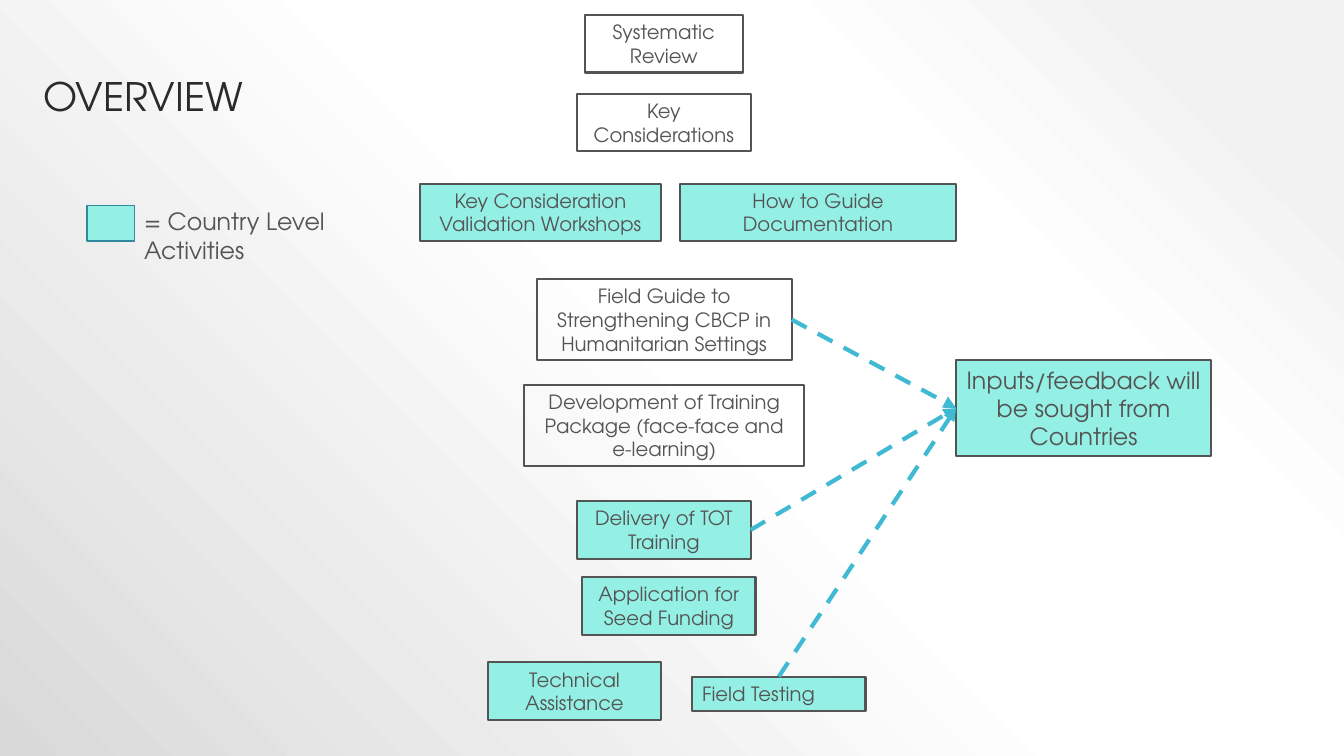
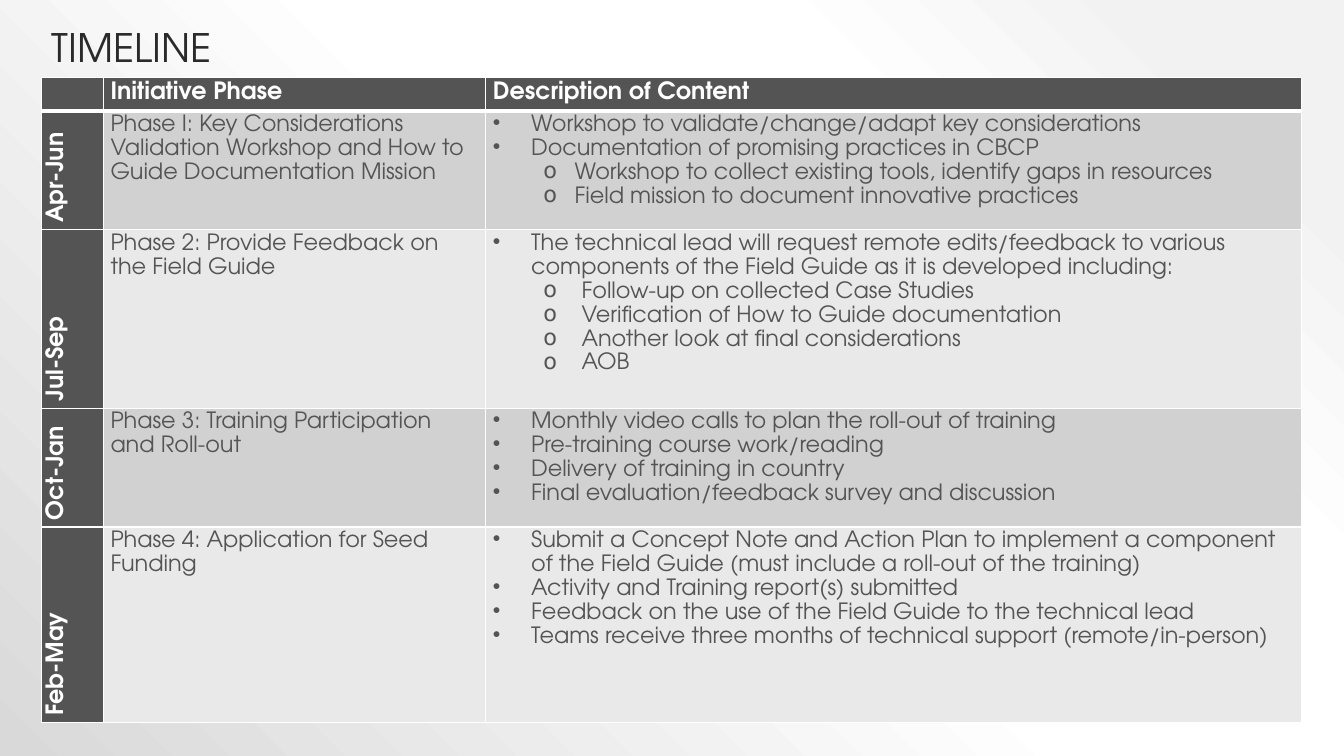
from lxml import etree
from pptx import Presentation
from pptx import util as u
from pptx.dml.color import RGBColor
from pptx.enum import dml, shapes, text
from pptx.oxml import parse_xml
from pptx.oxml.ns import qn, nsdecls

FONT = "TeX Gyre Adventor"
HUES = {
    "ink": "545454", "title": "2A2A2A", "white": "FFFFFF", "mint": "94F0E4",
    "edge": "2F8A9B", "arrow": "40BAD2", "dark": "D1D1D1", "light": "E9E9E9",
}
GLOW = [(10, "F2F2F2"), (28, "FFFFFF"), (48, "FFFFFF"), (100, "D9D9D9")]
MID, LEFT = text.PP_ALIGN.CENTER, text.PP_ALIGN.LEFT
TOP_SITE, LEFT_SITE, RIGHT_SITE = 0, 1, 3


def hue(name):
    return RGBColor.from_string(HUES[name])


class Deck:
    """Shared style and current slide; lengths are percent of the slide."""

    def __init__(self):
        self.prs = Presentation()
        self.prs.slide_width = u.Inches(13.33)
        self.prs.slide_height = u.Inches(7.5)
        self.glow()

    def glow(self):
        """Give the master a radial gradient centred on the top right."""
        master = self.prs.slide_master
        master.background.fill.solid()
        plain = master.element.find(".//" + qn("p:bgPr") + "/" + qn("a:solidFill"))
        stops = "".join(
            f'<a:gs pos="{pos * 1000}"><a:srgbClr val="{tone}"/></a:gs>'
            for pos, tone in GLOW)
        plain.getparent().replace(plain, parse_xml(
            f'<a:gradFill {nsdecls("a")} rotWithShape="1"><a:gsLst>{stops}</a:gsLst>'
            '<a:path path="circle"><a:fillToRect l="100000" b="100000"/></a:path>'
            '</a:gradFill>'))

    def wide(self, share):
        return round(self.prs.slide_width * share / 100)

    def high(self, share):
        return round(self.prs.slide_height * share / 100)

    def area(self, x, y, w, h):
        return self.wide(x), self.high(y), self.wide(w), self.high(h)

    def style(self, para, size, tone="ink", align=LEFT, bold=False):
        para.alignment = align
        font = para.font
        font.name, font.size, font.bold = FONT, u.Pt(size), bold
        font.color.rgb = hue(tone)

    def slide(self, title, spot):
        self.page = self.prs.slides.add_slide(self.prs.slide_layouts[5])
        head = self.page.shapes.title
        head.left, head.top, head.width, head.height = self.area(*spot)
        frame = head.text_frame
        frame.text = title
        frame.auto_size = text.MSO_AUTO_SIZE.NONE
        frame.vertical_anchor = text.MSO_ANCHOR.BOTTOM
        para = frame.paragraphs[0]
        para.line_spacing = 0.9
        self.style(para, 28, "title")

    def words(self, shape, label, size, align):
        frame = shape.text_frame
        frame.word_wrap = True
        frame.auto_size = text.MSO_AUTO_SIZE.SHAPE_TO_FIT_TEXT
        frame.text = label
        self.style(frame.paragraphs[0], size, align=align)

    def box(self, spot, label="", fill=None, size=14, align=MID, line=("ink", 1.5)):
        shape = self.page.shapes.add_shape(
            shapes.MSO_SHAPE.RECTANGLE, *self.area(*spot))
        shape.shadow.inherit = False
        if fill:
            shape.fill.solid()
            shape.fill.fore_color.rgb = hue(fill)
        else:
            shape.fill.background()
        shape.line.color.rgb = hue(line[0])
        shape.line.width = u.Pt(line[1])
        if label:
            self.words(shape, label, size, align)
        return shape

    def note(self, spot, label, size):
        self.words(self.page.shapes.add_textbox(*self.area(*spot)), label, size, LEFT)

    def arrow(self, start, site, goal):
        link = self.page.shapes.add_connector(
            shapes.MSO_CONNECTOR.STRAIGHT, 0, 0, 0, 0)
        link.begin_connect(start, site)
        link.end_connect(goal, LEFT_SITE)
        link.line.color.rgb = hue("arrow")
        link.line.width = u.Pt(3)
        link.line.dash_style = dml.MSO_LINE.DASH
        stroke = link._element.spPr.find(qn("a:ln"))
        etree.SubElement(stroke, qn("a:tailEnd"), type="triangle")
        etree.SubElement(link._element.spPr, qn("a:effectLst"))

    def grid(self, spot, cols, rows):
        frame = self.page.shapes.add_table(
            len(rows), len(cols), *self.area(*spot, sum(cols), sum(rows)))
        table = frame.table
        table.first_row = table.horz_banding = False
        for col, share in zip(table.columns, cols):
            col.width = self.wide(share)
        for row, share in zip(table.rows, rows):
            row.height = self.high(share)
        return table

    def cell(self, cell, fill, lines, size=16, tone="ink", bold=False, edges=(1, 1)):
        """Fill a cell; lines are (text, bullet, margin, hang) in inches."""
        cell.fill.solid()
        cell.fill.fore_color.rgb = hue(fill)
        cell.margin_left = cell.margin_right = u.Inches(0.07)
        cell.margin_top, cell.margin_bottom = u.Inches(0.01), 0
        top, low = edges
        for i, (side, width) in enumerate(zip("LRTB", (1, 1, top, low))):
            cell._tc.tcPr.insert(i, parse_xml(
                f'<a:ln{side} {nsdecls("a")} w="{u.Pt(width)}"><a:solidFill>'
                f'<a:srgbClr val="{HUES["white"]}"/></a:solidFill></a:ln{side}>'))
        frame = cell.text_frame
        for i, (label, mark, margin, hang) in enumerate(lines):
            para = frame.add_paragraph() if i else frame.paragraphs[0]
            para.text = label
            para.line_spacing = 1.15
            self.style(para, size, tone, bold=bold)
            if mark:
                para.level = int(mark == "o")
                props = para._p.get_or_add_pPr()
                props.set("marL", str(u.Inches(margin)))
                props.set("indent", str(-u.Inches(hang)))
                etree.SubElement(props, qn("a:buChar"), char=mark)
                # bullets come before the default run format
                props.append(props.find(qn("a:defRPr")))


def plain(label):
    return [(label, None, 0, 0)]


def points(*labels):
    return [(label, "•", 0.38, 0.38) for label in labels]


def subs(margin, hang, *labels):
    return [(label, "o", margin, hang) for label in labels]


def overview(deck):
    deck.slide("OVERVIEW", (2.48, 5.43, 21.23, 11.07))
    two, three, slim = 7.6, 10.8, 12.9
    steps = [
        ("Systematic Review", 43.5, 2, 11.78, two, None),
        ("Key Considerations", 42.95, 12.43, slim, two, None),
        ("Key Consideration Validation Workshops", 31.22, 24.3, 18, two, "mint"),
        ("How to Guide Documentation", 50.6, 24.3, 20.55, two, "mint"),
        ("Field Guide to Strengthening CBCP in Humanitarian Settings",
         39.93, 36.88, 18.98, three, None),
        ("Development of Training Package (face-face and e-learning)",
         39, 50.88, 20.85, three, None),
        ("Delivery of TOT Training", 42.95, 66.3, slim, two, "mint"),
        ("Application for Seed Funding", 43.32, 76.35, slim, two, "mint"),
        ("Technical Assistance", 36.3, 87.6, slim, two, "mint"),
    ]
    made = {label: deck.box(spot, label, fill) for label, *spot, fill in steps}
    test = deck.box((51.5, 89.5, slim, 4.53), "Field Testing", "mint", align=LEFT)
    deck.box((6.47, 27.22, 3.53, 4.67), fill="mint", line=("edge", 1))
    deck.note((9.98, 26.73, 19.5, 8.93), "= Country Level Activities", 16.9)
    goal = deck.box((71.14, 47.65, 18.98, 12.67),
                    "Inputs/feedback will be sought from Countries", "mint", 16.9)
    deck.arrow(made[steps[4][0]], RIGHT_SITE, goal)
    deck.arrow(made[steps[6][0]], RIGHT_SITE, goal)
    deck.arrow(test, TOP_SITE, goal)


def timeline(deck):
    deck.slide("TIMELINE", (3.1, 2.27, 80, 7.73))
    phases = [
        ("Apr-Jun", "Phase I: Key Considerations Validation Workshop and How to "
         "Guide Documentation Mission",
         points("Workshop to validate/change/adapt key considerations",
                "Documentation of promising practices in CBCP")
         + subs(0.81, 0.31,
                "Workshop to collect existing tools, identify gaps in resources",
                "Field mission to document innovative practices")),
        ("Jul-Sep", "Phase 2: Provide Feedback on the Field Guide",
         points("The technical lead will request remote edits/feedback to various "
                "components of the Field Guide as it is developed including:")
         + subs(0.88, 0.38,
                "Follow-up on collected Case Studies",
                "Verification of How to Guide documentation",
                "Another look at final considerations",
                "AOB")),
        ("Oct-Jan", "Phase 3: Training Participation and Roll-out",
         points("Monthly video calls to plan the roll-out of training",
                "Pre-training course work/reading",
                "Delivery of training in country",
                "Final evaluation/feedback survey and discussion")),
        ("Feb-May", "Phase 4: Application for Seed Funding",
         points("Submit a Concept Note and Action Plan to implement a component of "
                "the Field Guide (must include a roll-out of the training)",
                "Activity and Training report(s) submitted",
                "Feedback on the use of the Field Guide to the technical lead",
                "Teams receive three months of technical support "
                "(remote/in-person)")),
    ]
    table = deck.grid((3.1, 10.27), (4.6, 28.45, 60.7),
                      (4.4, 15.73, 23.6, 15.73, 25.87))
    head = {"size": 17, "tone": "white", "bold": True}
    for col, label in enumerate(("", "Initiative Phase", "Description of Content")):
        deck.cell(table.cell(0, col), "ink", plain(label), edges=(1, 3), **head)
    for row, (months, phase, content) in enumerate(phases, 1):
        edges = (3 if row == 1 else 1, 1)
        band = "dark" if row % 2 else "light"
        side = table.cell(row, 0)
        deck.cell(side, "ink", plain(months), edges=edges, **head)
        side.vertical_anchor = text.MSO_ANCHOR.MIDDLE
        side._tc.tcPr.set("vert", "vert270")
        deck.cell(table.cell(row, 1), band, plain(phase), edges=edges)
        deck.cell(table.cell(row, 2), band, content, edges=edges)


def main():
    deck = Deck()
    overview(deck)
    timeline(deck)
    deck.prs.save("out.pptx")


if __name__ == "__main__":
    main()
